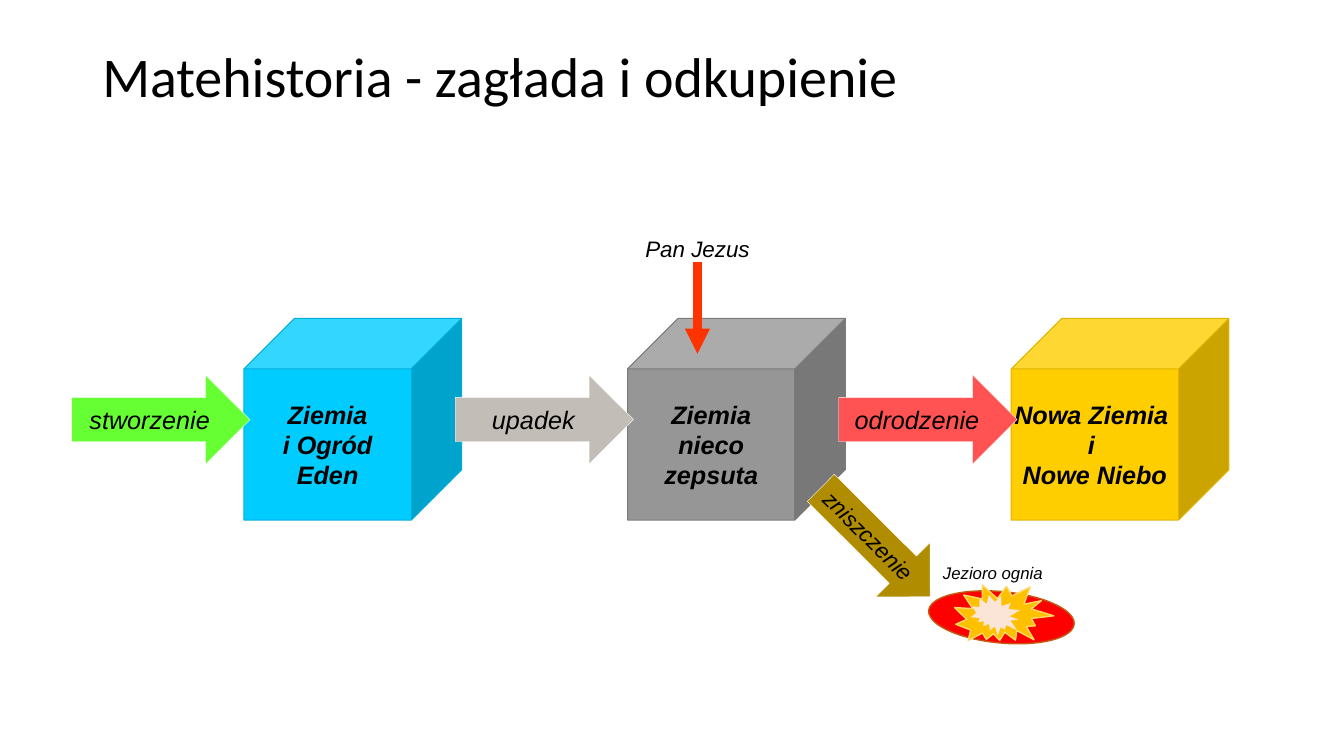
"""Build the slide that shows destruction and redemption as a chain of worlds."""
from lxml.etree import SubElement
from pptx import Presentation
from pptx.dml.color import RGBColor
from pptx.enum.shapes import MSO_CONNECTOR, MSO_SHAPE as SHAPE
from pptx.enum.text import MSO_ANCHOR as ANCHOR, PP_ALIGN as ALIGN
from pptx.oxml.ns import qn
from pptx.util import Pt


def write(holder, text, size=18, font="Arial", bold=False, italic=True,
          align=ALIGN.CENTER, wrap=False, margin=None, spacing=None):
    frame = holder.text_frame
    frame.text = text
    frame.word_wrap = wrap
    frame.vertical_anchor = ANCHOR.MIDDLE
    if margin is not None:
        frame.margin_left = frame.margin_right = Pt(margin)
        frame.margin_top = frame.margin_bottom = Pt(margin)
    for paragraph in frame.paragraphs:
        paragraph.alignment = align
        paragraph.line_spacing = spacing
        for run in paragraph.runs:
            run.font.size, run.font.name = Pt(size), font
            run.font.bold, run.font.italic = bold, italic
            run.font.color.rgb = RGBColor.from_string("000000")


def draw(kind, left, top, width, height, fill, line=None, weight=1, turn=0):
    shape = slide.shapes.add_shape(kind, Pt(left), Pt(top), Pt(width), Pt(height))
    shape.shadow.inherit = False
    shape.rotation = turn
    shape.fill.solid()
    shape.fill.fore_color.rgb = RGBColor.from_string(fill)
    if line:
        shape.line.color.rgb = RGBColor.from_string(line)
        shape.line.width = Pt(weight)
    else:
        shape.line.fill.background()
    return shape


deck = Presentation()
deck.slide_width, deck.slide_height = Pt(960), Pt(540)
slide = deck.slides.add_slide(deck.slide_layouts[6])

title = slide.shapes.add_textbox(Pt(66), Pt(28.8), Pt(828), Pt(56))
write(title, "Matehistoria - zagłada i odkupienie", size=40, font="Calibri",
      italic=False, align=ALIGN.LEFT, wrap=True, spacing=0.9)

STEP = 274
worlds = [
    ("Ziemia\ni Ogród\vEden", "00CCFF", "00AED8"),
    ("Ziemia\vnieco\vzepsuta", "969696", "7A7A7A"),
    ("Nowa Ziemia \ni \nNowe Niebo", "FFCE00", "E0B400"),
]
for i, (name, fill, edge) in enumerate(worlds):
    world = draw(SHAPE.CUBE, 174.3 + i * STEP, 227.5, 155.5, 144, fill, edge, 0.75)
    write(world, name, bold=True)

events = [("stworzenie", "66FF33"), ("upadek", "C2BDB6"), ("odrodzenie", "FF5353")]
for i, (name, fill) in enumerate(events):
    event = draw(SHAPE.RIGHT_ARROW, 51.2 + i * STEP, 268, 127.4, 63.4, fill, "FFFFFF", 0.25)
    write(event, name)

destruction = draw(SHAPE.RIGHT_ARROW, 570.2, 360, 110.2, 54.7, "B08D00", "FFFFFF", 0.25, 44.9)
write(destruction, "zniszczenie", size=16)

captions = [("Jezioro ognia", 657.4, 399.6, 18.7, 12), ("Pan Jezus", 446.4, 165.6, 23.8, 16)]
for name, left, top, height, size in captions:
    caption = slide.shapes.add_textbox(Pt(left), Pt(top), Pt(103.7), Pt(height))
    write(caption, name, size=size, wrap=True, margin=2.2)

coming = slide.shapes.add_connector(MSO_CONNECTOR.STRAIGHT, Pt(498.2), Pt(187.2), Pt(498.2), Pt(252.7))
coming.line.color.rgb = RGBColor.from_string("FF3300")
coming.line.width = Pt(6)
SubElement(coming.line._get_or_add_ln(), qn("a:tailEnd"), type="triangle")
SubElement(coming._element.spPr, qn("a:effectLst"))

draw(SHAPE.FLOWCHART_CONNECTOR, 663.1, 422.6, 104.4, 36.7, "FF0000", "C55A11", turn=5.4)
draw(SHAPE.EXPLOSION2, 681.8, 414.7, 69.8, 49, "FFC000", "FFD966", turn=16.2)
draw(SHAPE.EXPLOSION2, 694.8, 423.4, 33.8, 32.4, "FBE5D6", turn=56.2)

deck.save("out.pptx")
